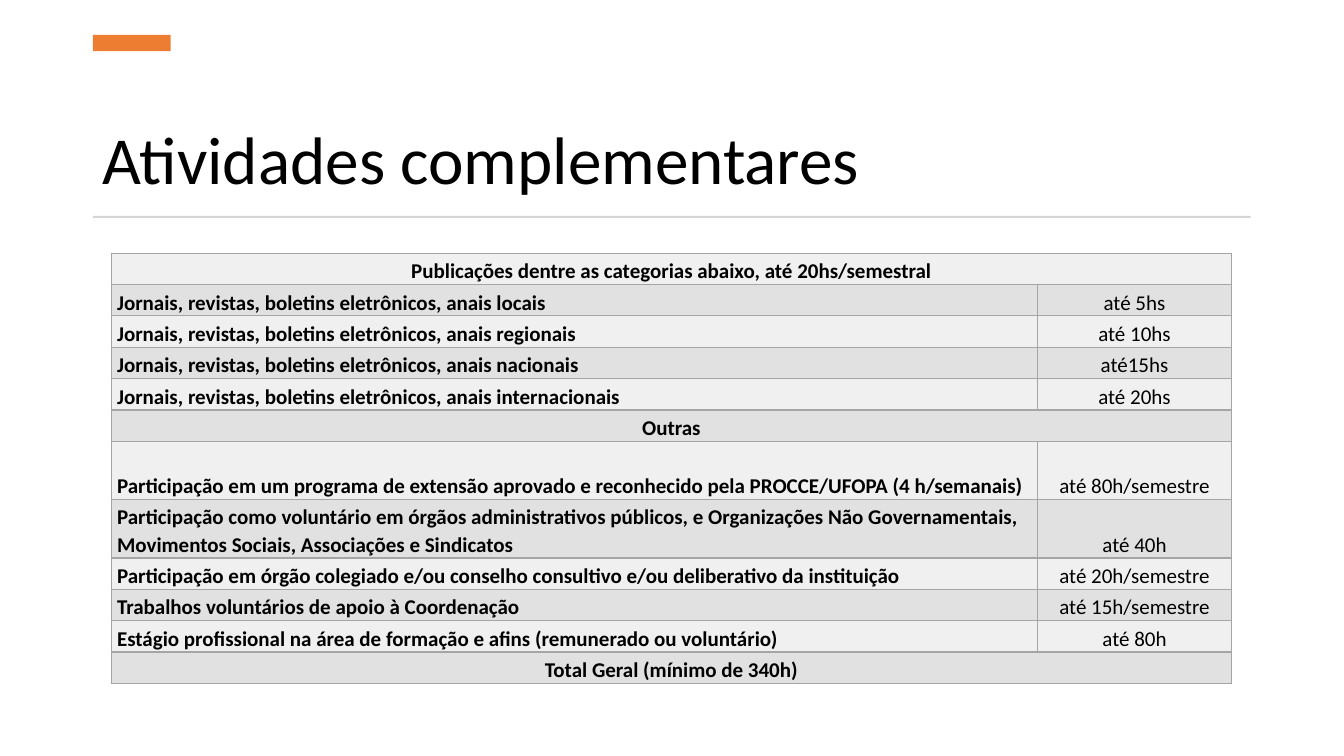
from lxml.etree import SubElement
from pptx import Presentation
from pptx.dml.color import RGBColor
from pptx.enum.shapes import MSO_SHAPE
from pptx.enum.text import MSO_ANCHOR, PP_ALIGN
from pptx.oxml.ns import qn
from pptx.util import Cm, Pt

LEFT, WIDTH = 2.34, 29.18
ROW_HEIGHT, TALL_ROW_HEIGHT = 0.79, 1.47
COLUMN_WIDTHS = (23.34, 4.9)
BAND_COLORS = ("F0F0F0", "E1E1E1")
ACTIVITIES = [
    ("Publicações dentre as categorias abaixo, até 20hs/semestral", None),
    ("Jornais, revistas, boletins eletrônicos, anais locais", "até 5hs"),
    ("Jornais, revistas, boletins eletrônicos, anais regionais", "até 10hs"),
    ("Jornais, revistas, boletins eletrônicos, anais nacionais", "até15hs"),
    ("Jornais, revistas, boletins eletrônicos, anais internacionais", "até 20hs"),
    ("Outras", None),
    ("Participação em um programa de extensão aprovado e reconhecido pela "
     "PROCCE/UFOPA (4 h/semanais)", "até 80h/semestre"),
    ("Participação como voluntário em órgãos administrativos públicos, e "
     "Organizações Não Governamentais, Movimentos Sociais, Associações e Sindicatos",
     "até 40h"),
    ("Participação em órgão colegiado e/ou conselho consultivo e/ou deliberativo "
     "da instituição", "até 20h/semestre"),
    ("Trabalhos voluntários de apoio à Coordenação", "até 15h/semestre"),
    ("Estágio profissional na área de formação e afins (remunerado ou voluntário)",
     "até 80h"),
    ("Total Geral (mínimo de 340h)", None),
]
TALL_ROWS = (6, 7)


def paint(fill, color):
    fill.solid()
    fill.fore_color.rgb = RGBColor.from_string(color)


def write_text(text_frame, text, size=15, bold=False, align=PP_ALIGN.LEFT, spacing=1.07):
    text_frame.word_wrap = True
    paragraph = text_frame.paragraphs[0]
    paragraph.alignment = align
    paragraph.line_spacing = spacing
    run = paragraph.add_run()
    run.text = text
    run.font.name = "Calibri"
    run.font.size = Pt(size)
    run.font.bold = bold
    paint(run.font.fill, "000000")


def add_title(slide, text):
    title = slide.shapes.add_textbox(Cm(LEFT), Cm(1.91), Cm(WIDTH), Cm(3.23))
    title.text_frame.vertical_anchor = MSO_ANCHOR.BOTTOM
    write_text(title.text_frame, text, size=48, spacing=0.9)


def add_bar(slide, top, width, height, color):
    bar = slide.shapes.add_shape(
        MSO_SHAPE.RECTANGLE, Cm(LEFT), Cm(top), Cm(width), Cm(height))
    bar.shadow.inherit = False
    paint(bar.fill, color)
    bar.line.fill.background()


def add_borders(cell, color):
    properties = cell._tc.get_or_add_tcPr()
    for position, side in enumerate(("a:lnL", "a:lnR", "a:lnT", "a:lnB")):
        line = properties.makeelement(qn(side), {"w": str(Pt(1))})
        fill = SubElement(line, qn("a:solidFill"))
        SubElement(fill, qn("a:srgbClr"), val=color)
        properties.insert(position, line)


def format_cell(cell, color):
    cell.margin_left = cell.margin_right = Cm(0.15)
    cell.margin_top = cell.margin_bottom = 0
    cell.vertical_anchor = MSO_ANCHOR.BOTTOM
    paint(cell.fill, color)
    add_borders(cell, "A5A5A5")


def add_activity_table(slide):
    heights = [TALL_ROW_HEIGHT if index in TALL_ROWS else ROW_HEIGHT
               for index in range(len(ACTIVITIES))]
    table = slide.shapes.add_table(
        len(ACTIVITIES), len(COLUMN_WIDTHS), Cm(2.8), Cm(6.38),
        Cm(sum(COLUMN_WIDTHS)), Cm(sum(heights))).table
    for column, width in zip(table.columns, COLUMN_WIDTHS):
        column.width = Cm(width)
    for index, (activity, hours) in enumerate(ACTIVITIES):
        table.rows[index].height = Cm(heights[index])
        name_cell, hours_cell = table.cell(index, 0), table.cell(index, 1)
        for cell in (name_cell, hours_cell):
            format_cell(cell, BAND_COLORS[index % 2])
        if hours is None:
            name_cell.merge(hours_cell)
            write_text(name_cell.text_frame, activity, bold=True, align=PP_ALIGN.CENTER)
        else:
            write_text(name_cell.text_frame, activity, bold=True)
            write_text(hours_cell.text_frame, hours, align=PP_ALIGN.CENTER)


def main():
    presentation = Presentation()
    presentation.slide_width = Cm(33.87)
    presentation.slide_height = Cm(19.05)
    slide = presentation.slides.add_slide(presentation.slide_layouts[6])
    add_title(slide, "Atividades complementares")
    add_bar(slide, 0.88, 1.96, 0.41, "ED7D31")
    add_bar(slide, 5.44, WIDTH, 0.05, "D5D5D5")
    add_activity_table(slide)
    presentation.save("out.pptx")


if __name__ == "__main__":
    main()
